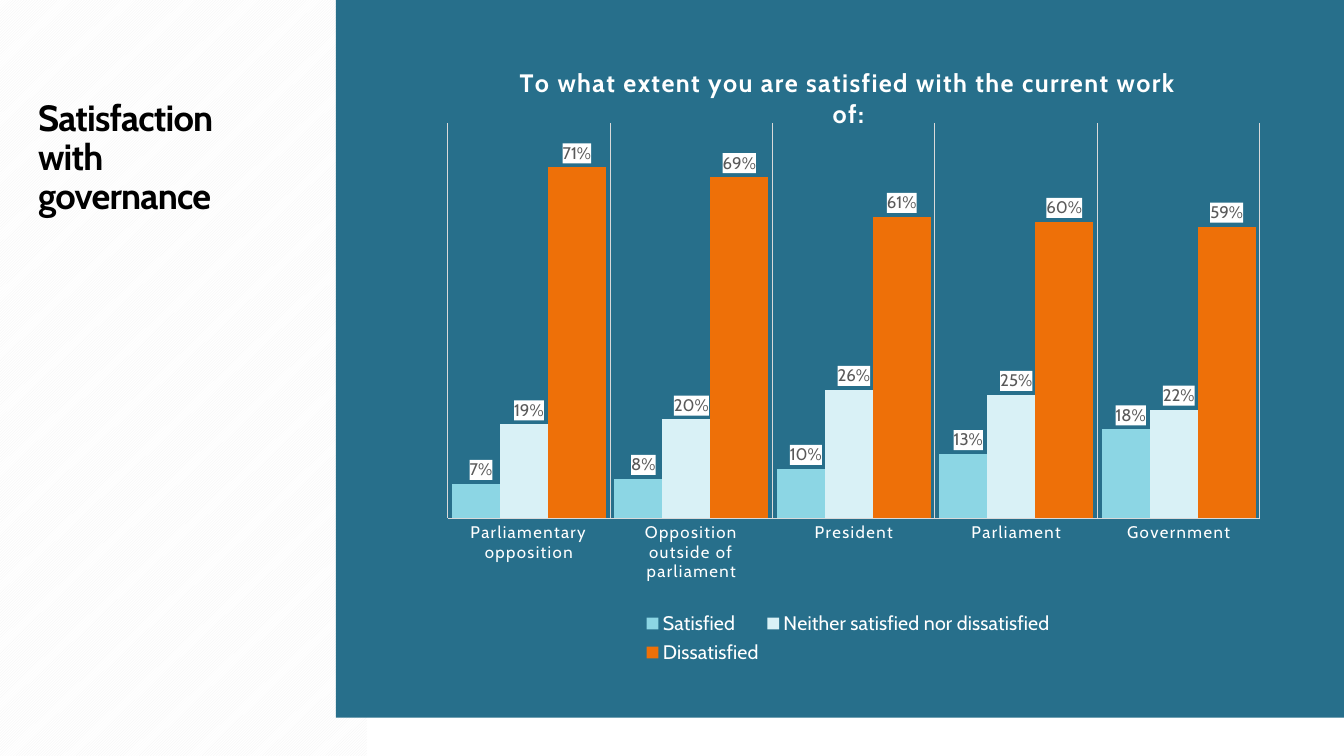
from pptx import Presentation
from pptx import oxml
from pptx import util as u
from pptx.chart.data import CategoryChartData
from pptx.dml.color import RGBColor
from pptx.enum import chart as ch, dml, shapes, text
from pptx.oxml import ns

WHITE = RGBColor(0xFF, 0xFF, 0xFF)
BLACK = RGBColor(0, 0, 0)
STRIPE = RGBColor(0xF2, 0xF2, 0xF2)
TEAL = RGBColor(0x27, 0x6F, 0x8B)
GRID = RGBColor(0xD9, 0xD9, 0xD9)
LABEL = RGBColor(0x59, 0x59, 0x59)
FONT = "Cabin"

# Grid of 40 columns by 30 rows
WIDTH, HEIGHT = u.Inches(13.33), u.Inches(7.5)
COLS, ROWS = 40, 30

INSTITUTIONS = ["Parliamentary opposition", "Opposition outside of parliament",
                "President", "Parliament", "Government"]
ANSWERS = [
    ("Satisfied", RGBColor(0x8C, 0xD6, 0xE4), (0.07, 0.08, 0.10, 0.13, 0.18)),
    ("Neither satisfied nor dissatisfied", RGBColor(0xD9, 0xF1, 0xF6),
     (0.19, 0.20, 0.26, 0.25, 0.22)),
    ("Dissatisfied", RGBColor(0xEE, 0x70, 0x08),
     (0.71, 0.69, 0.61, 0.60, 0.59)),
]


def place(col, row, cols, rows):
    """Turn grid units into left, top, width and height."""
    return (round(WIDTH * col / COLS), round(HEIGHT * row / ROWS),
            round(WIDTH * cols / COLS), round(HEIGHT * rows / ROWS))


def style_font(font, size, color, bold=False):
    font.name, font.size, font.bold = FONT, u.Pt(size), bold
    font.color.rgb = color


def write(frame, words, size=18, color=BLACK, bold=False, spacing=0, line=None):
    paragraph = frame.paragraphs[0]
    paragraph.line_spacing = line
    run = paragraph.add_run()
    run.text = words
    style_font(run.font, size, color, bold)
    run.font._element.set("spc", str(spacing))


def add_panel(slide, area, color, stripe=None):
    panel = slide.shapes.add_shape(shapes.MSO_SHAPE.RECTANGLE, *place(*area))
    panel.shadow.inherit = False
    panel.line.fill.background()
    if stripe is None:
        panel.fill.solid()
        panel.fill.fore_color.rgb = color
    else:
        panel.fill.patterned()
        panel.fill.pattern = dml.MSO_PATTERN.DARK_UPWARD_DIAGONAL
        panel.fill.fore_color.rgb = stripe
        panel.fill.back_color.rgb = color


def add_heading(slide, area, words, **style):
    heading = slide.shapes.add_textbox(*place(*area)).text_frame
    heading.word_wrap = True
    heading.vertical_anchor = text.MSO_ANCHOR.TOP
    write(heading, words, **style)


def chart_layout(x, y, w, h, inner=False):
    target = '<c:layoutTarget val="inner"/>' if inner else ""
    modes = "".join(f'<c:{side}Mode val="edge"/>' for side in "xy")
    sizes = "".join(f'<c:{key} val="{share}"/>'
                    for key, share in zip("xywh", (x, y, w, h)))
    return oxml.parse_xml(
        f'<c:layout {ns.nsdecls("c")}><c:manualLayout>{target}{modes}{sizes}'
        '</c:manualLayout></c:layout>')


def set_layout(parent, index, layout):
    for old in parent.findall(ns.qn("c:layout")):
        parent.remove(old)
    parent.insert(index, layout)


def style_series(series, color):
    series.format.fill.solid()
    series.format.fill.fore_color.rgb = color
    series.invert_if_negative = False
    labels = series.data_labels
    labels.show_value = True
    labels.number_format, labels.number_format_is_linked = "0%", False
    labels.position = ch.XL_LABEL_POSITION.OUTSIDE_END
    style_font(labels.font, 12, LABEL)
    # White plate behind each value
    plate = oxml.parse_xml(
        f'<c:spPr {ns.nsdecls("c", "a")}><a:solidFill>'
        f'<a:srgbClr val="{WHITE}"/></a:solidFill></c:spPr>')
    labels._element.find(ns.qn("c:numFmt")).addnext(plate)


def style_axes(chart):
    institutions, shares = chart.category_axis, chart.value_axis
    institutions.major_tick_mark = ch.XL_TICK_MARK.NONE
    institutions.has_major_gridlines = True
    for line in (institutions.format.line,
                 institutions.major_gridlines.format.line):
        line.color.rgb, line.width = GRID, u.Pt(0.75)
    style_font(institutions.tick_labels.font, 12, WHITE)
    institutions.tick_labels.font._element.set("spc", "100")
    shares.minimum_scale, shares.maximum_scale = 0, 0.8
    shares.has_major_gridlines = False
    shares.visible = False


def add_survey_chart(slide, area, question):
    survey = CategoryChartData(number_format="0%")
    survey.categories = INSTITUTIONS
    for answer, _, shares in ANSWERS:
        survey.add_series(answer, shares)
    chart = slide.shapes.add_chart(ch.XL_CHART_TYPE.COLUMN_CLUSTERED,
                                   *place(*area), survey).chart
    style_font(chart.font, 10, BLACK)
    chart.has_title = True
    write(chart.chart_title.text_frame, question,
          size=18, color=WHITE, bold=True, spacing=100)

    # Columns
    columns = chart.plots[0]
    columns.vary_by_categories = False
    columns.gap_width, columns.overlap = 15, 17
    for series, (_, color, _) in zip(columns.series, ANSWERS):
        style_series(series, color)
    style_axes(chart)
    plot_area = chart._chartSpace.chart.plotArea
    set_layout(plot_area, 0, chart_layout(0.023, 0.127, 0.967, 0.632, inner=True))

    # Legend
    chart.has_legend = True
    legend = chart.legend
    legend.position = ch.XL_LEGEND_POSITION.BOTTOM
    legend.include_in_layout = False
    style_font(legend.font, 14, WHITE)
    set_layout(legend._element, 1, chart_layout(0.25, 0.9, 0.5, 0.1))


def main():
    deck = Presentation()
    deck.slide_width, deck.slide_height = WIDTH, HEIGHT
    slide = deck.slides.add_slide(deck.slide_layouts[6])

    # Striped side strip and main panel
    add_panel(slide, (0, 0, 10.92, ROWS), WHITE, stripe=STRIPE)
    add_panel(slide, (10, 0, 30, 28.48), TEAL)

    # Heading and survey results
    add_heading(slide, (0.84, 3.76, 7.71, 14.6), "Satisfaction with governance",
                size=26, bold=True, spacing=-60, line=0.9)
    add_survey_chart(slide, (12.75, 1.72, 25, 24.84),
                     "To what extent you are satisfied with the current work of:")
    deck.save("out.pptx")


if __name__ == "__main__":
    main()
